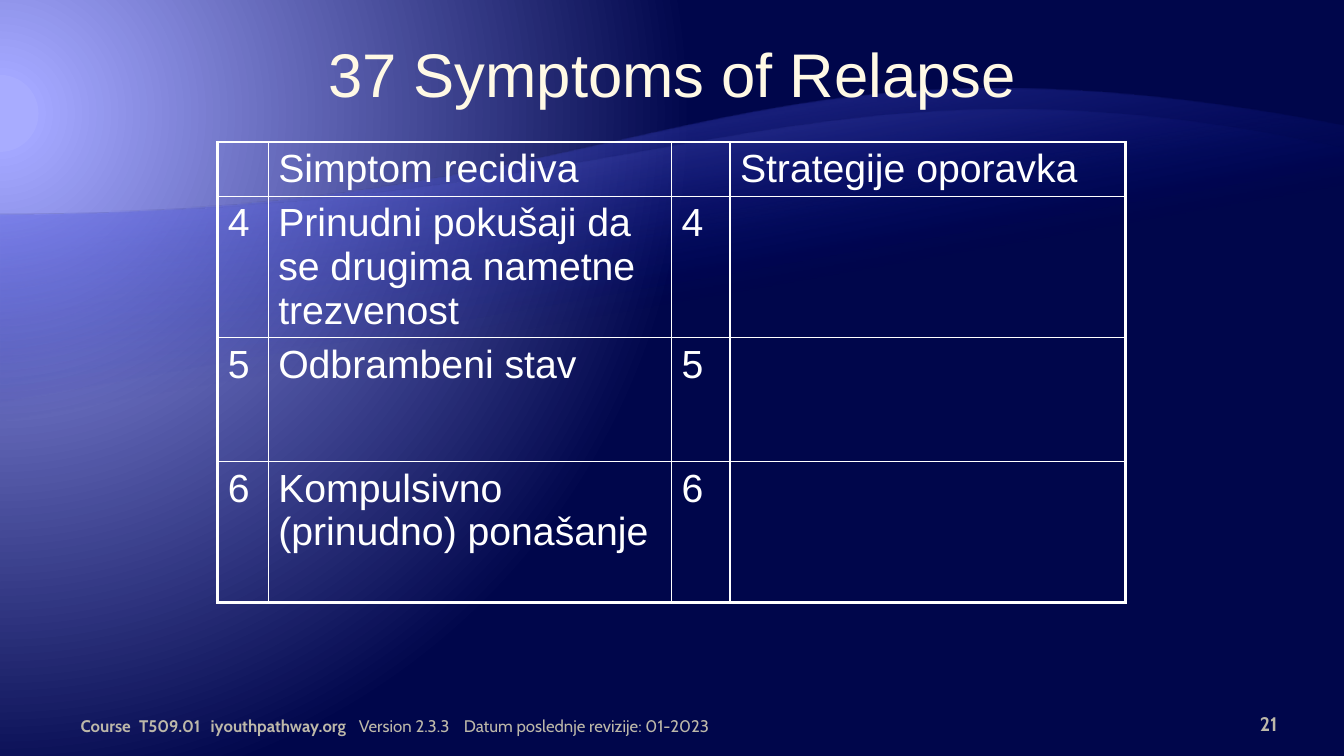
import lxml.etree
import pptx
import pptx.dml.color
import pptx.enum.text
import pptx.oxml
import pptx.oxml.ns
import pptx.util

Inches = pptx.util.Inches
Pt = pptx.util.Pt
ALIGN = pptx.enum.text.PP_ALIGN
ANCHOR = pptx.enum.text.MSO_ANCHOR
qn = pptx.oxml.ns.qn

COLORS = {
    "glow": "A8ACFF",
    "halo": "A3A7FF",
    "night": "00064B",
    "deep": "000D9E",
    "violet": "797FFF",
    "title": "FFF9E5",
    "white": "FFFFFF",
    "footer": "BDB8A9",
}
SLIDE_SIZE = (13.33, 7.5)
COLUMN_WIDTHS = (0.5, 4, 0.58, 3.92)
ROW_HEIGHTS = (0.54, 1.4, 1.23, 1.4)
BOTTOM_MARGINS = (0.02, -0.05, 0.05, 0.05)
SYMPTOM_ROWS = (
    ("", "Simptom recidiva", "", "Strategije oporavka"),
    ("4", "Prinudni pokušaji da se drugima nametne trezvenost", "4", ""),
    ("5", "Odbrambeni stav", "5", ""),
    ("6", "Kompulsivno (prinudno) ponašanje", "6", ""),
)
FOOTER_PARTS = (
    ("Course", 0.8, 0.57, True),
    ("T509.01", 1.38, 0.7, True),
    ("iyouthpathway.org", 2.09, 1.47, True),
    ("Version 2.3.3", 3.56, 1.04, False),
    ("Datum poslednje revizije: 01-2023", 4.6, 4.07, False),
)


def set_gradient(holder, stops, direction):
    gradient = lxml.etree.Element(qn("a:gradFill"), rotWithShape="1")
    stop_list = lxml.etree.SubElement(gradient, qn("a:gsLst"))
    for position, color, opacity in stops:
        stop = lxml.etree.SubElement(stop_list, qn("a:gs"), pos=str(position * 1000))
        tint = lxml.etree.SubElement(stop, qn("a:srgbClr"), val=COLORS[color])
        if opacity < 100:
            lxml.etree.SubElement(tint, qn("a:alpha"), val=str(opacity * 1000))
    gradient.append(direction)
    holder.replace(holder.find(qn("a:solidFill")), gradient)


def add_run(paragraph, text, size, font, color, bold=False):
    run = paragraph.add_run()
    run.text = text
    run.font.size = Pt(size)
    run.font.name = font
    run.font.bold = bold
    run.font.color.rgb = pptx.dml.color.RGBColor.from_string(COLORS[color])


def add_line_of_text(slide, box, text, size, font, color, align, anchor, insets, bold=False):
    frame = slide.shapes.add_textbox(*map(Inches, box)).text_frame
    frame.word_wrap = True
    frame.vertical_anchor = anchor
    frame.margin_left, frame.margin_top, frame.margin_right, frame.margin_bottom = map(Inches, insets)
    frame.paragraphs[0].alignment = align
    add_run(frame.paragraphs[0], text, size, font, color, bold)


def paint_background(slide):
    slide.background.fill.solid()
    glow = lxml.etree.Element(qn("a:path"))
    glow.set("path", "circle")
    lxml.etree.SubElement(glow, qn("a:fillToRect"), l="20000", t="30000", r="135000", b="100000")
    stops = ((5, "glow", 100), (5, "halo", 100), (90, "night", 100))
    set_gradient(slide.element.find(".//" + qn("p:bgPr")), stops, glow)


def add_wave(slide, box, crest, end_y, bottom, color, opacity):
    left, top, width = box
    right = left + width
    corners = [(right, end_y), (right, bottom), (left, bottom)]
    outline = slide.shapes.build_freeform(Inches(left), Inches(top))
    outline.add_line_segments([(Inches(x), Inches(y)) for x, y in corners], close=True)
    wave = outline.convert_to_shape()
    edge = wave.element.find(".//" + qn("a:lnTo"))
    curve = lxml.etree.Element(qn("a:cubicBezTo"))
    for x, y in ((left + width / 2, top), crest, (right, end_y)):
        lxml.etree.SubElement(curve, qn("a:pt"), x=str(Inches(x) - wave.left), y=str(Inches(y) - wave.top))
    edge.getparent().replace(edge, curve)
    wave.shadow.inherit = False
    wave.line.fill.background()
    wave.fill.solid()
    slope = lxml.etree.Element(qn("a:lin"), ang=str(260 * 60000), scaled="0")
    stops = ((65, "deep", 0), (100, color, opacity))
    set_gradient(wave.element.spPr, stops, slope)


def set_border(cell, side, width):
    properties = cell._tc.get_or_add_tcPr()
    border = lxml.etree.SubElement(properties, qn("a:ln" + side), w=str(Pt(width)))
    fill = lxml.etree.SubElement(border, qn("a:solidFill"))
    lxml.etree.SubElement(fill, qn("a:srgbClr"), val=COLORS["white"])


def add_symptom_table(slide, left, top):
    rows, columns = len(ROW_HEIGHTS), len(COLUMN_WIDTHS)
    box = (left, top, sum(COLUMN_WIDTHS), sum(ROW_HEIGHTS))
    table = slide.shapes.add_table(rows, columns, *map(Inches, box)).table
    table.first_row = False
    table.horz_banding = False
    for column, width in zip(table.columns, COLUMN_WIDTHS):
        column.width = Inches(width)
    for r, (height, texts) in enumerate(zip(ROW_HEIGHTS, SYMPTOM_ROWS)):
        table.rows[r].height = Inches(height)
        for c, text in enumerate(texts):
            cell = table.cell(r, c)
            cell.margin_bottom = Inches(BOTTOM_MARGINS[r])
            outer_sides = {"L": c == 0, "R": c == columns - 1, "T": r == 0, "B": r == rows - 1}
            for side, is_outer in outer_sides.items():
                set_border(cell, side, 2.25 if is_outer else 1)
            cell.fill.background()
            if text:
                add_run(cell.text_frame.paragraphs[0], text, 28, "Arial", "white")


def add_footer(slide, top, height):
    for text, left, width, bold in FOOTER_PARTS:
        add_line_of_text(slide, (left, top, width, height), text, 12, "Cabin", "footer",
                         ALIGN.LEFT, ANCHOR.BOTTOM, (0, 0.05, 0, 0.05), bold)
    add_line_of_text(slide, (11.89, top, 0.78, height), "21", 14, "Cabin", "footer",
                     ALIGN.RIGHT, ANCHOR.BOTTOM, (0.1, 0.05, 0, 0.05), True)


def main():
    presentation = pptx.Presentation()
    presentation.slide_width, presentation.slide_height = map(Inches, SLIDE_SIZE)
    slide = presentation.slides.add_slide(presentation.slide_layouts[6])
    paint_background(slide)
    wave_box = (0, 2.13, SLIDE_SIZE[0])
    add_wave(slide, wave_box, (7.13, 0.05), 1.25, 7.33, "violet", 55)
    add_wave(slide, wave_box, (7.97, 0.31), 1.47, 6.37, "halo", 30)
    add_line_of_text(slide, (2.17, 0.3, 9, 1.25), "37 Symptoms of Relapse", 44, "Arial", "title",
                     ALIGN.CENTER, ANCHOR.TOP, (0.1, 0.06, 0.1, 0.05))
    add_symptom_table(slide, 2.16, 1.41)
    add_footer(slide, 6.95, 0.4)
    presentation.save("out.pptx")


if __name__ == "__main__":
    main()
